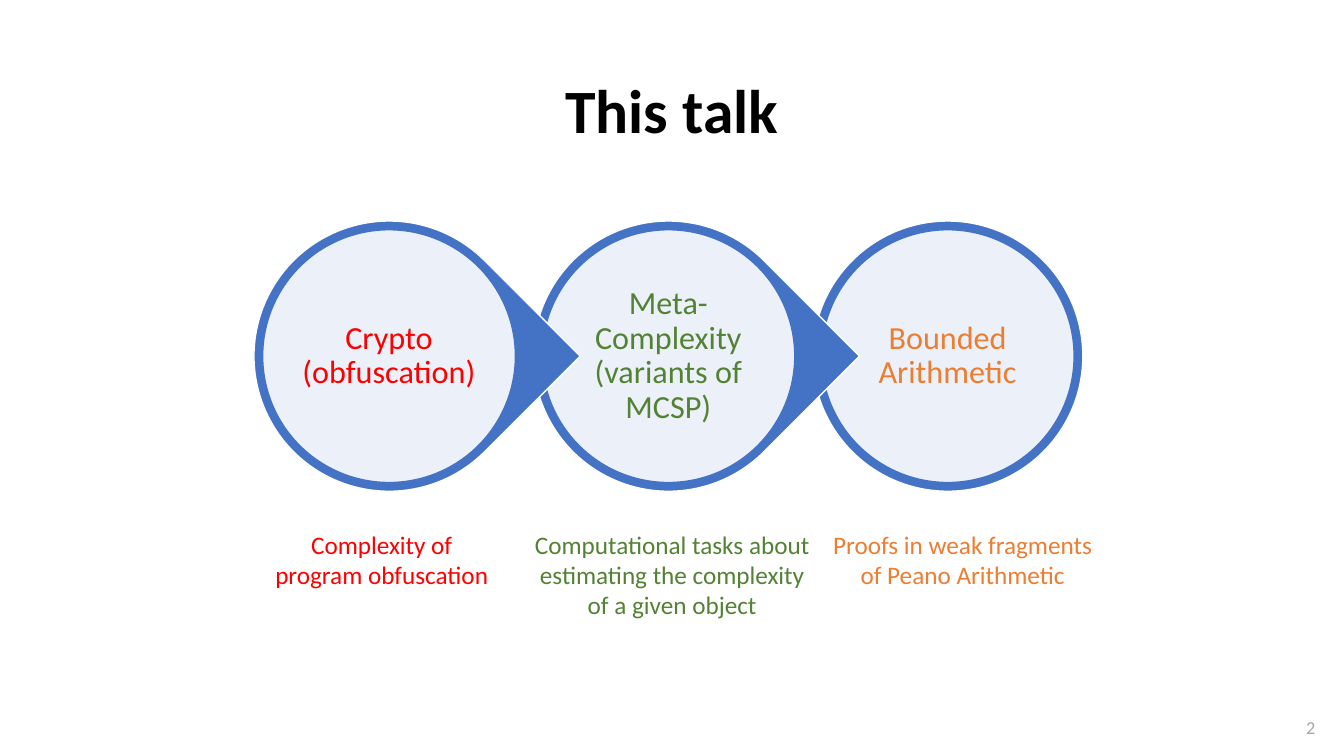
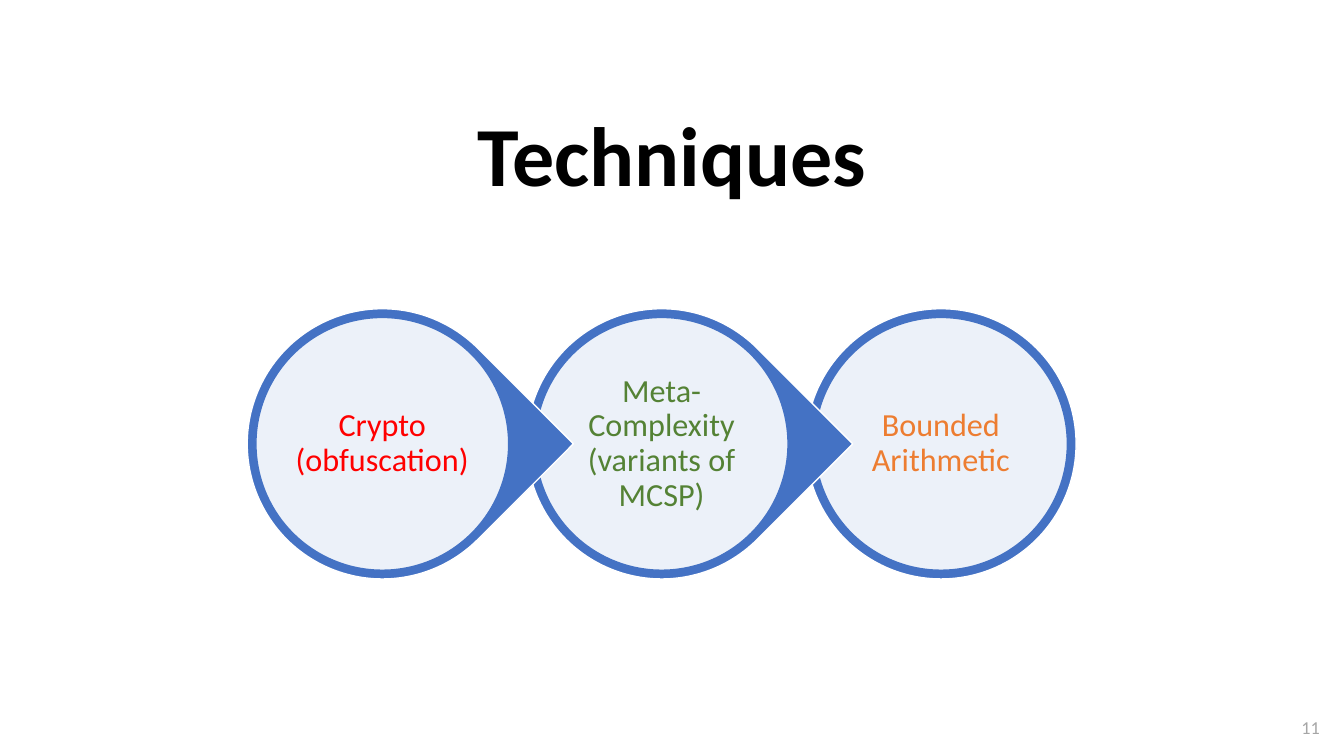
from dataclasses import dataclass

from lxml.etree import SubElement
from pptx import Presentation
from pptx.dml.color import RGBColor
from pptx.enum.shapes import MSO_SHAPE
from pptx.enum.text import MSO_ANCHOR, MSO_AUTO_SIZE, PP_ALIGN
from pptx.oxml.ns import qn
from pptx.util import Cm, Pt


@dataclass(frozen=True)
class Theme:
    font: str = "Calibri"
    black: str = "000000"
    white: str = "FFFFFF"
    blue: str = "4472C4"
    red: str = "FF0000"
    green: str = "548235"
    gold: str = "ED7D31"
    grey: str = "A6A6A6"
    head: int = 44
    cover: int = 60
    node: int = 23
    note: int = 18
    page: int = 13
    tight: float = 0.9
    clear: int = 90


THEME = Theme()
NODES = [
    ("Crypto (obfuscation)", THEME.red),
    ("Meta-Complexity (variants of MCSP)", THEME.green),
    ("Bounded Arithmetic", THEME.gold),
]
NOTES = [
    (["Complexity of", "program obfuscation"], THEME.red),
    (["Computational tasks about estimating the complexity of a given object"], THEME.green),
    (["Proofs in weak fragments of Peano Arithmetic"], THEME.gold),
]


def write(frame, lines, size, color, bold=False, space=None):
    frame.word_wrap = True
    for index, line in enumerate(lines):
        para = frame.add_paragraph() if index else frame.paragraphs[0]
        para.alignment = PP_ALIGN.CENTER
        para.line_spacing = space
        run = para.add_run()
        run.text = line
        font = run.font
        font.name, font.size, font.bold = THEME.font, Pt(size), bold
        font.color.rgb = RGBColor.from_string(color)


def add_disc(shapes, kind, left, top, size, fill, edge):
    disc = shapes.add_shape(kind, Cm(left), Cm(top), Cm(size), Cm(size))
    disc.shadow.inherit = False
    disc.fill.solid()
    disc.fill.fore_color.rgb = RGBColor.from_string(fill)
    disc.line.color.rgb = RGBColor.from_string(edge)
    disc.line.width = Pt(1)
    return disc


def fade(shape, share):
    color = shape.fill._xPr.find(qn("a:solidFill"))[0]
    SubElement(color, qn("a:alpha")).set("val", str(share * 1000))


def add_node(shapes, left, top, size, text, color, last):
    kind = MSO_SHAPE.OVAL if last else MSO_SHAPE.TEAR
    ring = add_disc(shapes, kind, left, top, size, THEME.blue, THEME.white)
    if not last:
        ring.adjustments[0] = 1
        ring.rotation = 45
    inset = 0.22
    face = add_disc(shapes, MSO_SHAPE.OVAL, left + inset, top + inset,
                    size - 2 * inset, THEME.white, THEME.blue)
    fade(face, THEME.clear)
    frame = face.text_frame
    frame.margin_left = frame.margin_right = Cm(0.05)
    frame.margin_top = frame.margin_bottom = Cm(0.05)
    frame.vertical_anchor = MSO_ANCHOR.MIDDLE
    write(frame, [text], THEME.node, color, space=THEME.tight)


def add_chain(slide, left, top, size=6.81, step=7.04):
    group = slide.shapes.add_group_shape()
    end = len(NODES) - 1
    for index in range(end, -1, -1):
        text, color = NODES[index]
        add_node(group.shapes, left + index * step, top, size, text, color, index == end)


def add_text(slide, left, top, width, height, lines, size, color):
    box = slide.shapes.add_textbox(Cm(left), Cm(top), Cm(width), Cm(height))
    write(box.text_frame, lines, size, color)


def add_notes(slide, left, top, width=7.46, step=7.32):
    for index, (lines, color) in enumerate(NOTES):
        add_text(slide, left + index * step, top, width, 2.57, lines, THEME.note, color)


def add_slide(deck, text, size, top, page):
    slide = deck.slides.add_slide(deck.slide_layouts[5])
    title = slide.shapes.title
    title.left, title.top = Cm(2.33), Cm(top)
    title.width, title.height = Cm(29.21), Cm(3.68)
    frame = title.text_frame
    frame.auto_size = MSO_AUTO_SIZE.NONE
    frame.vertical_anchor = MSO_ANCHOR.MIDDLE
    write(frame, [text], size, THEME.black, bold=True, space=THEME.tight)
    add_text(slide, 32.51, 17.93, 1.04, 0.81, [page], THEME.page, THEME.grey)
    return slide


def add_talk(deck):
    slide = add_slide(deck, "This talk", THEME.head, 1.01, "2")
    add_chain(slide, 6.4, 5.57)
    add_notes(slide, 5.89, 13.21)


def add_tools(deck):
    slide = add_slide(deck, "Techniques", THEME.cover, 2.18, "11")
    add_chain(slide, 6.23, 7.78)


def main():
    deck = Presentation()
    deck.slide_width, deck.slide_height = Cm(33.87), Cm(19.05)
    add_talk(deck)
    add_tools(deck)
    deck.save("out.pptx")


if __name__ == "__main__":
    main()
